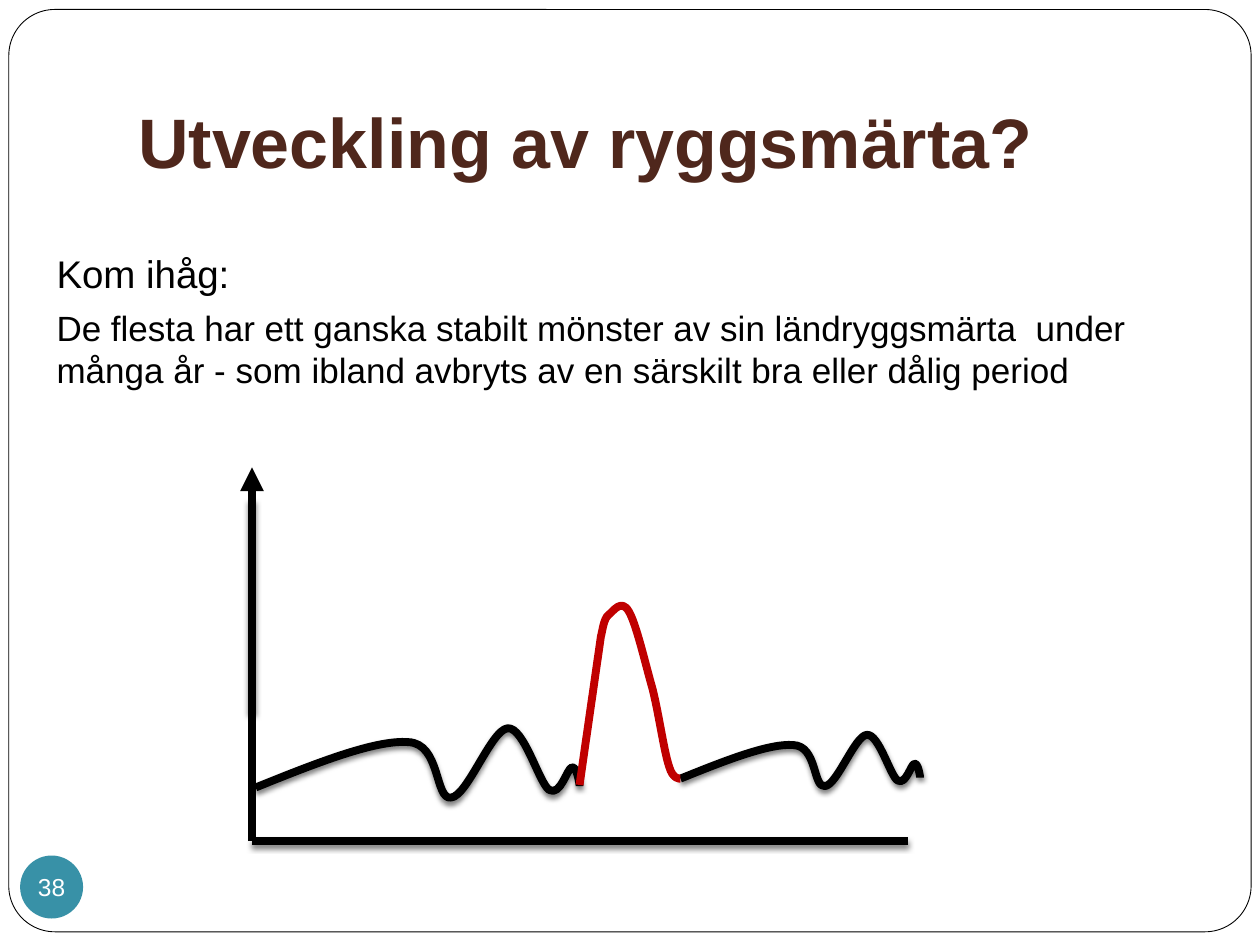
from dataclasses import dataclass
from typing import NamedTuple, Optional

from lxml.etree import SubElement
from pptx import Presentation
from pptx.dml.color import RGBColor as RGB
from pptx.enum.shapes import MSO_CONNECTOR as CONN, MSO_SHAPE as SHAPE
from pptx.enum.text import MSO_ANCHOR as ANCHOR, PP_ALIGN as ALIGN
from pptx.oxml.ns import qn
from pptx.util import Inches, Pt

COLS, ROWS = 40, 30
COLORS = {
    "white": "FFFFFF",
    "black": "000000",
    "brown": "4F271C",
    "teal": "3891A7",
    "red": "C00000",
}

prs = Presentation()
prs.slide_width, prs.slide_height = Inches(10), Inches(7.5)
s = prs.slides.add_slide(prs.slide_layouts[6])


class Cell(NamedTuple):
    col: float
    row: float

    def emu(self) -> tuple[int, int]:
        return (round(self.col * prs.slide_width / COLS),
                round(self.row * prs.slide_height / ROWS))


@dataclass
class Para:
    text: str
    size: float
    color: str
    bold: bool = False
    before: float = 0
    align: Optional[ALIGN] = None


@dataclass
class Axis:
    start: Cell
    end: Cell
    shadow: bool = True
    arrow: bool = False


@dataclass
class Curve:
    start: Cell
    segments: list
    scale: float = 1
    color: str = "black"
    shadow: bool = True

    def place(self, dx: float, dy: float) -> tuple[int, int]:
        return Cell(self.start.col + dx * self.scale,
                    self.start.row + dy * self.scale).emu()


def rgb(name: str) -> RGB:
    return RGB.from_string(COLORS[name])


def apply(target, **values) -> None:
    for name, value in values.items():
        setattr(target, name, value)


def style_stroke(sp, color: str, width: float, shadow: bool = False) -> None:
    sp.line.color.rgb = rgb(color)
    sp.line.width = Pt(width)
    spPr = sp.element.spPr
    effects = spPr.find(qn("a:effectLst"))
    if effects is None:
        effects = SubElement(spPr, qn("a:effectLst"))
    if shadow:
        outer = SubElement(effects, qn("a:outerShdw"), blurRad=str(Pt(3)),
                           dist=str(Pt(2)), dir="5400000", rotWithShape="0")
        clr = SubElement(outer, qn("a:srgbClr"), val=COLORS["black"])
        SubElement(clr, qn("a:alpha"), val="50000")


def add_shape(kind: SHAPE, at: Cell, size: Cell, fill: str):
    sp = s.shapes.add_shape(kind, *at.emu(), *size.emu())
    sp.shadow.inherit = False
    sp.fill.solid()
    sp.fill.fore_color.rgb = rgb(fill)
    sp.line.fill.background()
    return sp


def write(tf, paras: list[Para], **frame) -> None:
    apply(tf, **frame)
    for i, item in enumerate(paras):
        p = tf.add_paragraph() if i else tf.paragraphs[0]
        apply(p, alignment=item.align, space_before=Pt(item.before))
        r = p.add_run()
        r.text = item.text
        apply(r.font, name="Arial", size=Pt(item.size), bold=item.bold)
        r.font.color.rgb = rgb(item.color)


def add_text(at: Cell, size: Cell, paras: list[Para], **frame) -> None:
    tb = s.shapes.add_textbox(*at.emu(), *size.emu())
    write(tb.text_frame, paras, word_wrap=True, **frame)


def draw_axis(axis: Axis) -> None:
    line = s.shapes.add_connector(CONN.STRAIGHT, *axis.start.emu(), *axis.end.emu())
    style_stroke(line, "black", 4.5, axis.shadow)
    if axis.arrow:
        SubElement(line.element.spPr.find(qn("a:ln")), qn("a:tailEnd"), type="triangle")


def draw_curve(curve: Curve) -> None:
    builder = s.shapes.build_freeform(*curve.start.emu())
    builder.add_line_segments([curve.place(*seg[-1]) for seg in curve.segments],
                              close=False)
    sp = builder.convert_to_shape()
    steps = list(sp.element.spPr.iter(qn("a:lnTo")))
    for step, segment in zip(steps, curve.segments):
        if len(segment) == 3:
            bend = step.makeelement(qn("a:cubicBezTo"))
            for point in segment:
                x, y = curve.place(*point)
                SubElement(bend, qn("a:pt"), x=str(x - sp.left), y=str(y - sp.top))
            step.getparent().replace(step, bend)
    sp.fill.background()
    style_stroke(sp, curve.color, 4.5, curve.shadow)


WAVE = [
    ((1.88, -0.76), (3.8, -1.52), (4.84, -1.44)),
    ((5.88, -1.4), (5.68, 0.4), (6.2, 0.32)),
    ((6.72, 0.28), (7.48, -1.84), (8, -1.88)),
    ((8.52, -1.92), (9, -0.12), (9.32, 0.08)),
    ((9.68, 0.28), (9.88, -0.6), (10.04, -0.64)),
    ((10.2, -0.68), (10.28, -0.08), (10.28, -0.08)),
    ((10.28, -0.04),),
]
PEAK = [
    ((0.68, -4.72),),
    ((0.72, -4.84), (0.76, -5.28), (0.92, -5.4)),
    ((1.08, -5.52), (1.32, -5.92), (1.56, -5.52)),
    ((1.8, -5.12), (2.08, -3.88), (2.32, -3.04)),
    ((2.52, -2.24), (2.68, -1.08), (2.84, -0.6)),
    ((2.96, -0.16), (3.2, -0.2), (3.2, -0.2)),
]
ORIGIN = Cell(8, 26.7)
DIAGRAM = [
    Axis(Cell(8, 15.84), Cell(8, 22.64)),
    Axis(ORIGIN, Cell(28.84, 26.7)),
    Curve(Cell(8.12, 25), WAVE),
    Axis(ORIGIN, Cell(8, 14.84), shadow=False, arrow=True),
    Curve(Cell(21.6, 24.72), WAVE, scale=0.74),
    Curve(Cell(18.4, 24.92), PEAK, color="red", shadow=False),
]

frame = add_shape(SHAPE.ROUNDED_RECTANGLE, Cell(0.28, 0.3), Cell(39.44, 29.28), "white")
frame.adjustments[0] = 0.05
style_stroke(frame, "black", 0.5)

add_text(Cell(4, 1.2), Cell(34, 5),
         [Para("Utveckling av ryggsmärta?", 40, "brown", bold=True)],
         vertical_anchor=ANCHOR.BOTTOM, margin_bottom=Inches(0.1))

badge = add_shape(SHAPE.OVAL, Cell(0.64, 27.16), Cell(2, 2), "teal")
write(badge.text_frame, [Para("38", 14, "white", align=ALIGN.CENTER)],
      word_wrap=False, vertical_anchor=ANCHOR.MIDDLE,
      margin_left=0, margin_right=0, margin_top=0, margin_bottom=0)

add_text(Cell(1.4, 7.74), Cell(35.96, 19.68), [
    Para("Kom ihåg:", 22, "black", before=5.8),
    Para("De flesta har ett ganska stabilt mönster av sin ländryggsmärta  under "
         "många år - som ibland avbryts av en särskilt bra eller dålig period",
         20, "black", before=5.8),
])

for part in DIAGRAM:
    if isinstance(part, Axis):
        draw_axis(part)
    else:
        draw_curve(part)

prs.save("out.pptx")
